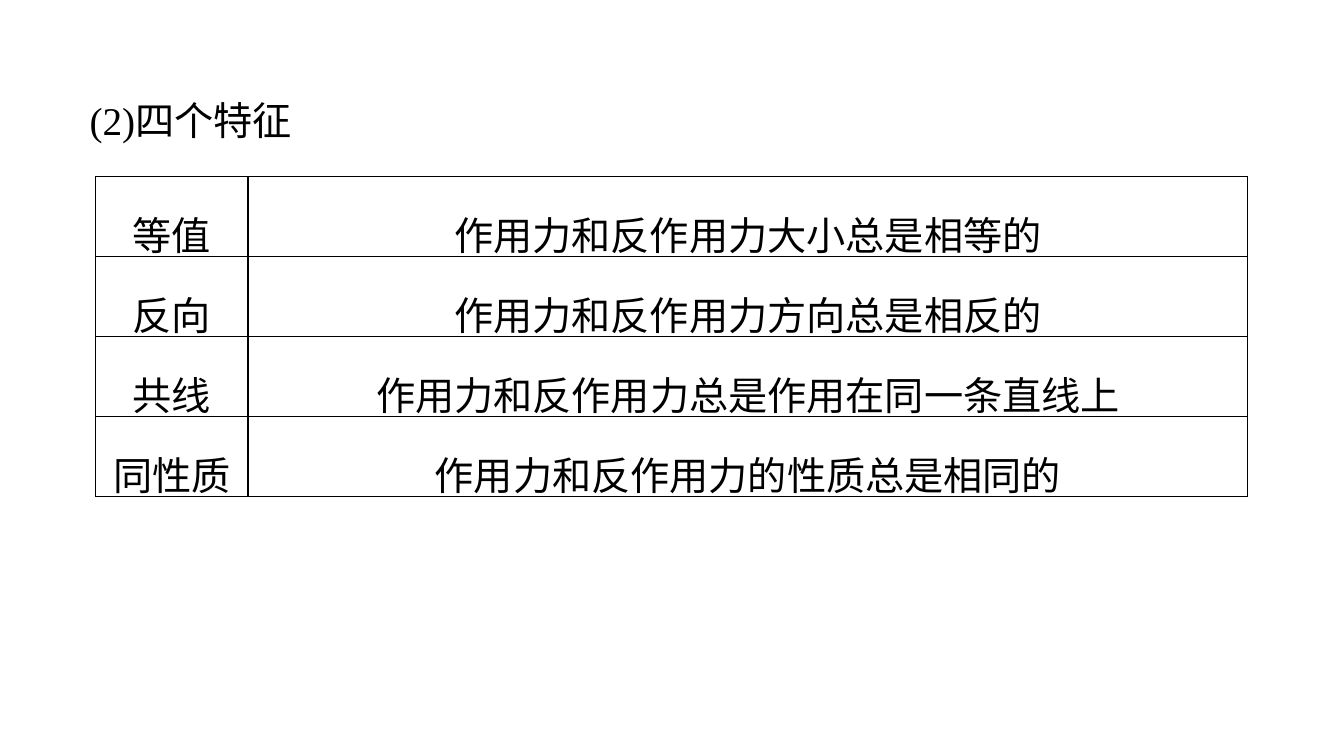
from dataclasses import dataclass

from lxml import etree
from pptx import Presentation
from pptx import util as u
from pptx.dml import color
from pptx.enum import text
from pptx.oxml import ns
from pptx.slide import Slide
from pptx.table import _Cell
from pptx.text.text import TextFrame

COLORS = {"ink": "000000", "paper": "FFFFFF"}
FONT = "Times New Roman"
FONT_SIZE = 28
BORDER_WIDTH = 1
COLUMN_WIDTHS = (108.7, 714.3)
ROW_HEIGHT = 57.2


@dataclass(frozen=True)
class Feature:
    name: str
    meaning: str


FEATURES = (
    Feature("等值", "作用力和反作用力大小总是相等的"),
    Feature("反向", "作用力和反作用力方向总是相反的"),
    Feature("共线", "作用力和反作用力总是作用在同一条直线上"),
    Feature("同性质", "作用力和反作用力的性质总是相同的"),
)


def write(frame: TextFrame, words: str, alignment: text.PP_ALIGN) -> None:
    frame.word_wrap = True
    paragraph = frame.paragraphs[0]
    paragraph.alignment = alignment
    paragraph.line_spacing = 1.5
    run = paragraph.add_run()
    run.text = words
    run.font.name = FONT
    run.font.size = u.Pt(FONT_SIZE)
    run.font.color.rgb = color.RGBColor.from_string(COLORS["ink"])


def add_borders(cell: _Cell) -> None:
    properties = cell._tc.get_or_add_tcPr()
    for side in ("lnL", "lnR", "lnT", "lnB"):
        line = etree.SubElement(properties, ns.qn(f"a:{side}"), w=str(u.Pt(BORDER_WIDTH)))
        fill = etree.SubElement(line, ns.qn("a:solidFill"))
        etree.SubElement(fill, ns.qn("a:srgbClr"), val=COLORS["ink"])


def fill_cell(cell: _Cell, words: str) -> None:
    cell.margin_left = cell.margin_right = u.Pt(2.9)
    cell.margin_top = cell.margin_bottom = u.Pt(0)
    cell.vertical_anchor = text.MSO_ANCHOR.MIDDLE
    add_borders(cell)
    cell.fill.background()
    write(cell.text_frame, words, text.PP_ALIGN.CENTER)


def add_heading(slide: Slide, words: str) -> None:
    heading = slide.shapes.add_textbox(u.Pt(56.9), u.Pt(48.2), u.Pt(839.5), u.Pt(51.8))
    write(heading.text_frame, words, text.PP_ALIGN.JUSTIFY)
    heading.text_frame.auto_size = text.MSO_AUTO_SIZE.SHAPE_TO_FIT_TEXT


def add_feature_table(slide: Slide, features: tuple[Feature, ...]) -> None:
    table = slide.shapes.add_table(
        len(features), len(COLUMN_WIDTHS), u.Pt(68.4), u.Pt(126),
        u.Pt(sum(COLUMN_WIDTHS)), u.Pt(ROW_HEIGHT * len(features)),
    ).table
    table.first_row = False
    table.horz_banding = False
    for column, width in zip(table.columns, COLUMN_WIDTHS):
        column.width = u.Pt(width)
    for row, feature in zip(table.rows, features):
        row.height = u.Pt(ROW_HEIGHT)
        for cell, words in zip(row.cells, (feature.name, feature.meaning)):
            fill_cell(cell, words)


def main() -> None:
    presentation = Presentation()
    presentation.slide_width = u.Pt(960)
    presentation.slide_height = u.Pt(540)
    slide = presentation.slides.add_slide(presentation.slide_layouts[6])
    slide.background.fill.solid()
    slide.background.fill.fore_color.rgb = color.RGBColor.from_string(COLORS["paper"])
    add_heading(slide, "(2)四个特征")
    add_feature_table(slide, FEATURES)
    presentation.save("out.pptx")


if __name__ == "__main__":
    main()
